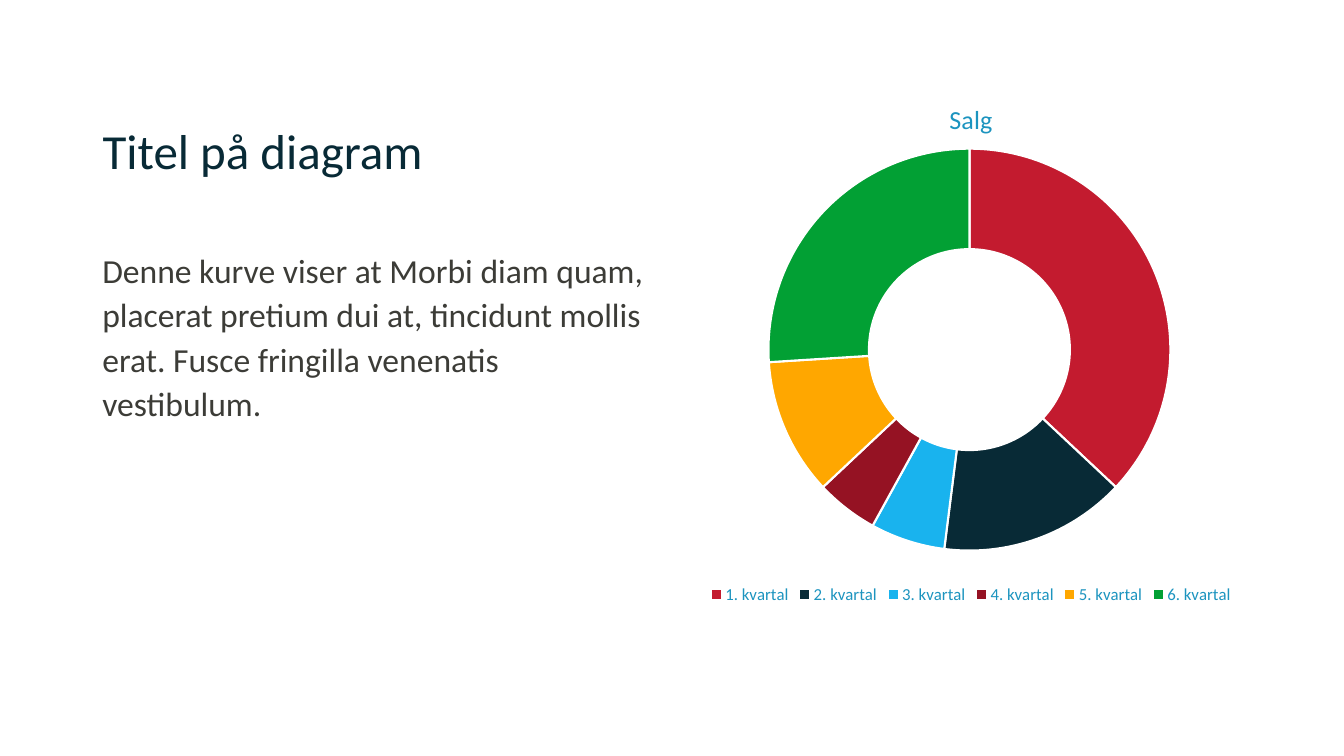
import pptx
import pptx.chart.data
import pptx.dml.color
import pptx.enum.chart
import pptx.enum.text
import pptx.oxml
import pptx.util
from pptx.util import Cm

FACE = "Calibri"
NAVY, TEAL, GREY = "082A36", "1C94BF", "3C3C37"


def tint(text):
    return pptx.dml.color.RGBColor.from_string(text)


def style(font, size, color):
    form = {"name": FACE, "size": pptx.util.Pt(size), "bold": False}
    for key, val in form.items():
        setattr(font, key, val)
    font.color.rgb = tint(color)


deck = pptx.Presentation()
deck.slide_width, deck.slide_height = Cm(33.87), Cm(19.05)
slide = deck.slides.add_slide(deck.slide_layouts[5])

# Title and body text
title = slide.shapes.title
body = slide.shapes.add_textbox(Cm(2.33), Cm(6.07), Cm(14.4), Cm(12.09))
place = {"left": Cm(2.33), "top": Cm(2.03),
         "width": Cm(29.21), "height": Cm(3.68)}
for key, val in place.items():
    setattr(title, key, val)

anchor = pptx.enum.text.MSO_ANCHOR
words = ("Denne kurve viser at Morbi diam quam, placerat pretium dui at, "
         "tincidunt mollis erat. Fusce fringilla venenatis vestibulum.")
texts = [
    (title, "Titel på diagram", 35, NAVY, 0.9, anchor.MIDDLE),
    (body, words, 24, GREY, 1.1, anchor.TOP),
]
for box, text, size, color, space, hold in texts:
    frame = box.text_frame
    frame.text = text
    frame.word_wrap = True
    frame.vertical_anchor = hold
    para = frame.paragraphs[0]
    form = {"alignment": pptx.enum.text.PP_ALIGN.LEFT,
            "line_spacing": space, "space_before": pptx.util.Pt(0)}
    for key, val in form.items():
        setattr(para, key, val)
    style(para.runs[0].font, size, color)

# Doughnut chart
sales = [37, 15, 6, 5, 11, 26]
hues = ["C31B2F", NAVY, "19B3EE", "951223", "FFA700", "02A034"]
data = pptx.chart.data.CategoryChartData()
data.categories = [f"{num}. kvartal" for num in range(1, len(sales) + 1)]
data.add_series("Salg", sales)
chart = slide.shapes.add_chart(
    pptx.enum.chart.XL_CHART_TYPE.DOUGHNUT,
    Cm(16.76), Cm(2.03), Cm(15.42), Cm(13.31), data).chart
style(chart.font, 10, NAVY)

# Chart title and legend
chart.has_title = True
head = chart.chart_title.text_frame
head.text = "Salg"
style(head.paragraphs[0].runs[0].font, 18.6, TEAL)
chart.has_legend = True
key_box = chart.legend
key_box.position = pptx.enum.chart.XL_LEGEND_POSITION.BOTTOM
key_box.include_in_layout = False
style(key_box.font, 12, TEAL)

# Slices
plot = chart.plots[0]
plot.vary_by_categories = True
for num, hue in enumerate(hues):
    part = plot.series[0].points[num].format
    part.fill.solid()
    part.fill.fore_color.rgb = tint(hue)
    part.line.color.rgb = tint("FFFFFF")
    part.line.width = pptx.util.Pt(1.5)

# Hole size and plot area
area = chart.element.find(".//{*}plotArea")
area.find(".//{*}holeSize").set("val", "75")
for old in area.findall("{*}layout"):
    area.remove(old)
rules = [("layoutTarget", "inner"), ("xMode", "edge"), ("yMode", "edge"),
         ("x", 0.169), ("y", 0.129), ("w", 0.657), ("h", 0.761)]
inner = "".join(f'<c:{tag} val="{val}"/>' for tag, val in rules)
area.insert(0, pptx.oxml.parse_xml(
    '<c:layout xmlns:c="http://schemas.openxmlformats.org/drawingml/2006/chart">'
    f"<c:manualLayout>{inner}</c:manualLayout></c:layout>"))

deck.save("out.pptx")
